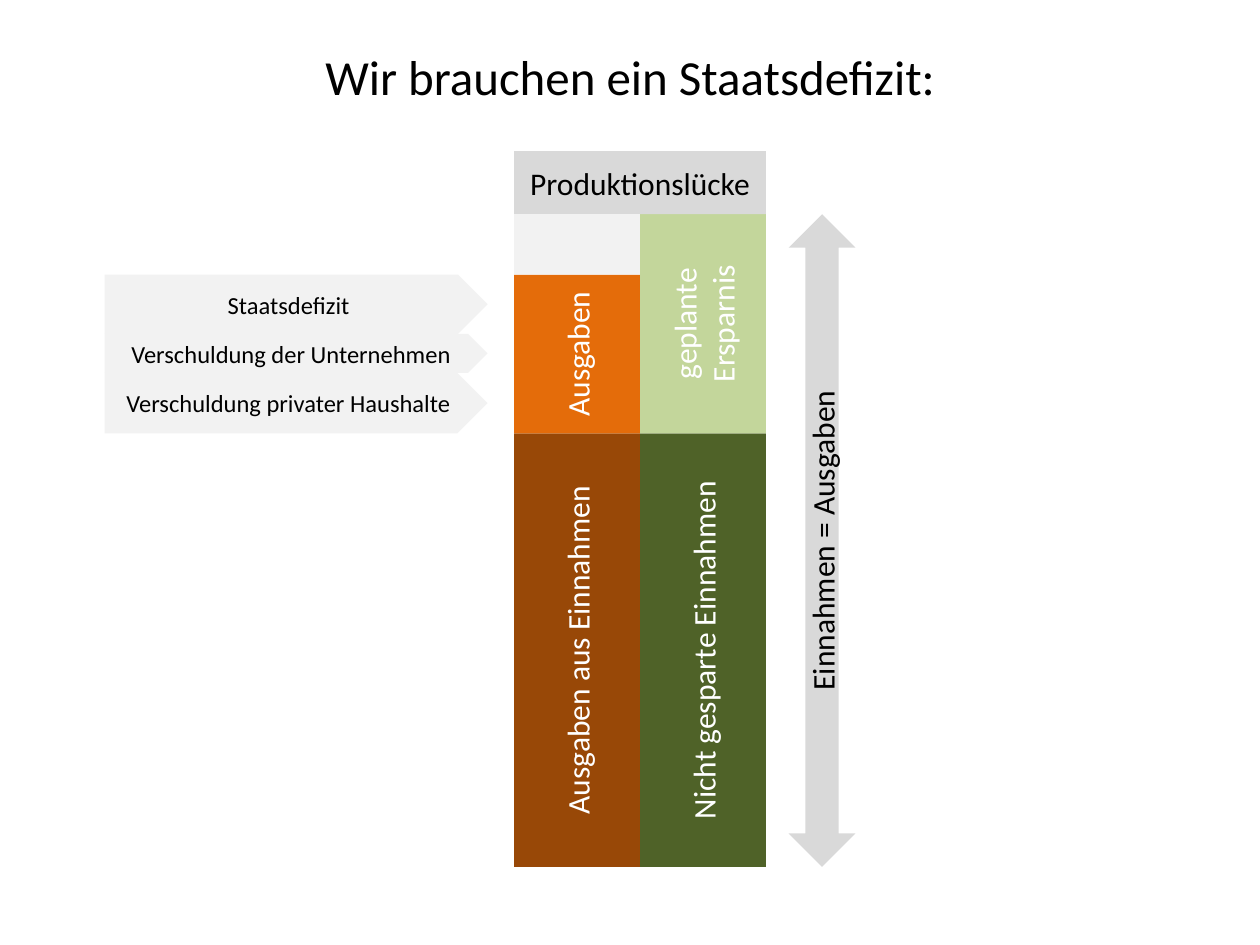
from dataclasses import dataclass

from pptx import Presentation, util as u
from pptx.dml.color import RGBColor
from pptx.enum import shapes, text

COLORS = {
    "black": "000000",
    "white": "FFFFFF",
    "pale": "F2F2F2",
    "grey": "D9D9D9",
    "orange": "E46C0A",
    "brown": "984807",
    "light_green": "C3D69B",
    "dark_green": "4F6228",
}
Kind = shapes.MSO_SHAPE
COLUMN_LEFT, COLUMN_WIDTH = 4.08, 1.0
RIGHT_LEFT = COLUMN_LEFT + COLUMN_WIDTH
GAP_TOP, STACK_TOP, DEBT_TOP, INCOME_TOP, STACK_BOTTOM = 1.2, 1.7, 2.18, 3.44, 6.88
DEBT_LEFT, DEBT_WIDTH = 0.83, 3.04


@dataclass
class Block:
    label: str
    left: float
    top: float
    width: float
    bottom: float
    fill: str
    color: str = "white"
    kind: Kind = Kind.RECTANGLE
    size: int = 18
    upright: bool = True


def write(box, label: str, size: int, color: str) -> None:
    frame = box.text_frame
    frame.word_wrap = True
    frame.vertical_anchor = text.MSO_ANCHOR.MIDDLE
    para = frame.paragraphs[0]
    para.alignment = text.PP_ALIGN.CENTER
    span = para.add_run()
    span.text = label
    for name, value in {"name": "Calibri", "size": u.Pt(size)}.items():
        setattr(span.font, name, value)
    span.font.color.rgb = RGBColor.from_string(COLORS[color])


def draw_block(page, block: Block) -> None:
    edges = (block.left, block.top, block.width, block.bottom - block.top)
    box = page.shapes.add_shape(block.kind, *map(u.Inches, edges))
    box.shadow.inherit = False
    box.fill.solid()
    box.fill.fore_color.rgb = RGBColor.from_string(COLORS[block.fill])
    box.line.fill.background()
    if block.label:
        write(box, block.label, block.size, block.color)
    if block.upright:
        box.element.xpath(".//a:bodyPr")[0].set("vert", "vert270")


def draw_title(page, label: str) -> None:
    title = page.shapes.title
    frame = {"left": 0.75, "top": 0.13, "width": 8.5, "height": 0.94}
    for name, value in frame.items():
        setattr(title, name, u.Inches(value))
    write(title, label, 28, "black")


def debt(label: str, top: float, bottom: float) -> Block:
    return Block(label, DEBT_LEFT, top, DEBT_WIDTH, bottom, "pale", "black",
                 Kind.PENTAGON, 14, False)


BLOCKS = [
    Block("Nicht gesparte Einnahmen", RIGHT_LEFT, INCOME_TOP, COLUMN_WIDTH, STACK_BOTTOM, "dark_green"),
    Block("Ausgaben aus Einnahmen", COLUMN_LEFT, INCOME_TOP, COLUMN_WIDTH, STACK_BOTTOM, "brown"),
    Block("geplante Ersparnis", RIGHT_LEFT, STACK_TOP, COLUMN_WIDTH, INCOME_TOP, "light_green"),
    Block("Ausgaben", COLUMN_LEFT, DEBT_TOP, COLUMN_WIDTH, INCOME_TOP, "orange"),
    Block("Einnahmen = Ausgaben", 6.26, STACK_TOP, 0.53, STACK_BOTTOM, "grey", "black",
          Kind.UP_DOWN_ARROW),
    Block("Produktionslücke", COLUMN_LEFT, GAP_TOP, 2 * COLUMN_WIDTH, STACK_TOP, "grey", "black",
          upright=False),
    debt("Verschuldung privater Haushalte", 2.96, INCOME_TOP),
    debt("Verschuldung der Unternehmen", 2.65, 2.96),
    debt("Staatsdefizit", DEBT_TOP, 2.65),
    Block("", COLUMN_LEFT, STACK_TOP, COLUMN_WIDTH, DEBT_TOP, "pale", upright=False),
]


def main() -> None:
    deck = Presentation()
    deck.slide_width, deck.slide_height = u.Inches(10), u.Inches(7.5)
    page = deck.slides.add_slide(deck.slide_layouts[5])
    draw_title(page, "Wir brauchen ein Staatsdefizit:")
    for block in BLOCKS:
        draw_block(page, block)
    deck.save("out.pptx")


if __name__ == "__main__":
    main()
